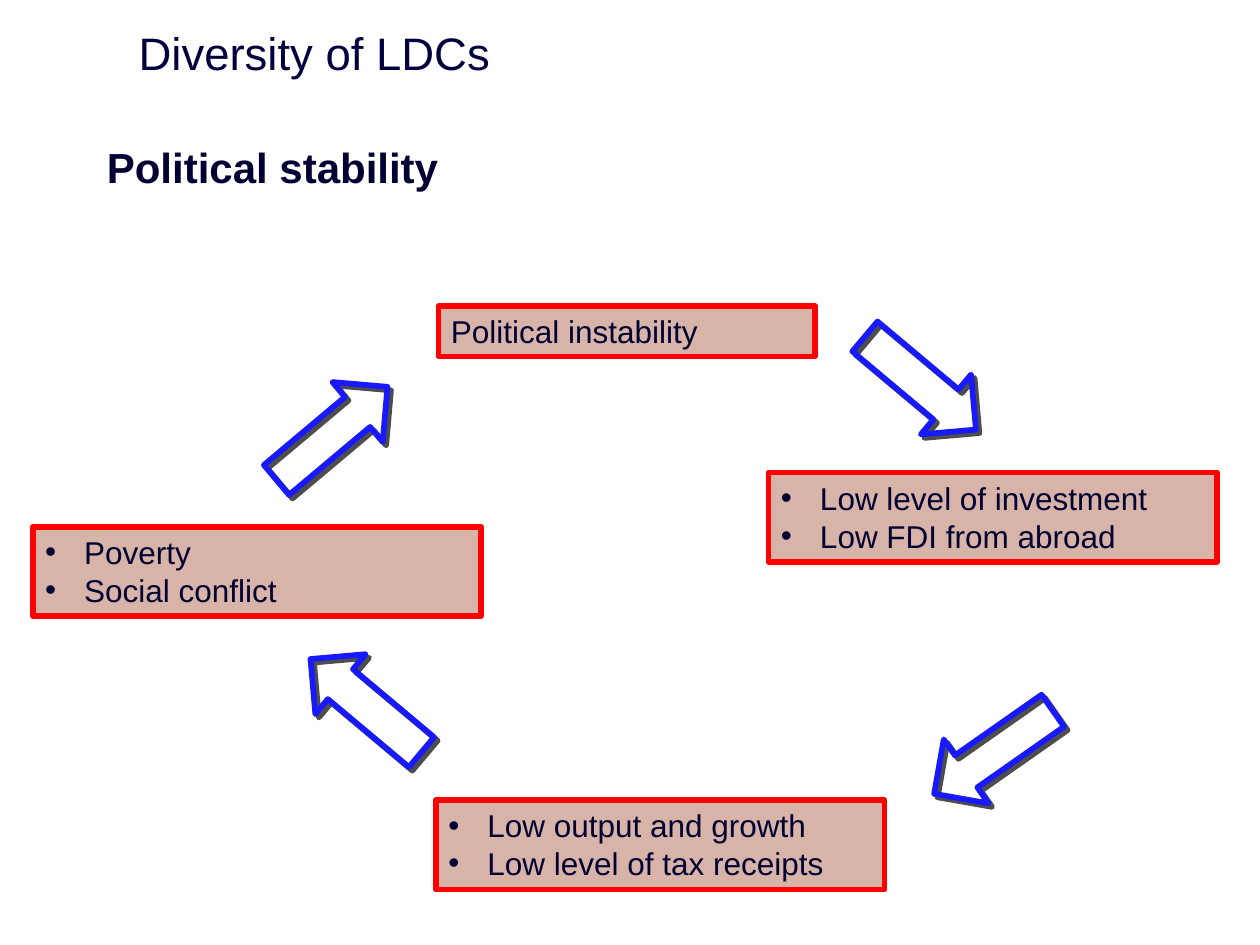
from dataclasses import dataclass
from lxml.etree import SubElement as Sub
from pptx import Presentation as Deck
from pptx.dml.color import RGBColor as RGB
from pptx.enum.shapes import MSO_SHAPE as Kind
from pptx.enum.text import MSO_ANCHOR as Anchor, PP_ALIGN as Align
from pptx.oxml.ns import qn
from pptx.util import Inches, Pt


@dataclass(frozen=True)
class Theme:
    font: str = "Arial"
    title: str = "00003E"
    ink: str = "000032"
    fill: str = "CD9C8D"
    alpha: int = 76
    edge: str = "FF0000"
    arrow: str = "1919FF"
    shade: str = "4D4D4D"
    line: float = 3.25
    big: int = 26
    head: int = 24
    body: int = 18


class Page:
    def __init__(self, slide, theme):
        self.slide = slide
        self.theme = theme

    def run(self, para, text, size, color, bold=False):
        para.alignment = Align.LEFT
        run = para.add_run()
        run.text = text
        run.font.name = self.theme.font
        run.font.size = Pt(size)
        run.font.bold = bold
        run.font.color.rgb = RGB.from_string(color)

    def title(self, text, left, top, width, height):
        shape = self.slide.shapes.title
        shape.left, shape.top = Inches(left), Inches(top)
        shape.width, shape.height = Inches(width), Inches(height)
        frame = shape.text_frame
        frame.vertical_anchor = Anchor.MIDDLE
        self.run(frame.paragraphs[0], text, self.theme.big, self.theme.title)

    def label(self, text, left, top, width, height):
        box = self.slide.shapes.add_textbox(
            Inches(left), Inches(top), Inches(width), Inches(height))
        frame = box.text_frame
        frame.word_wrap = True
        self.run(frame.paragraphs[0], text, self.theme.head, self.theme.ink, True)

    def shape(self, kind, left, top, width, height, edge):
        shape = self.slide.shapes.add_shape(
            kind, Inches(left), Inches(top), Inches(width), Inches(height))
        shape.shadow.inherit = False
        shape.line.color.rgb = RGB.from_string(edge)
        shape.line.width = Pt(self.theme.line)
        return shape

    def bullet(self, para):
        props = para._p.get_or_add_pPr()
        indent = Inches(0.31)
        props.set("marL", str(indent))
        props.set("indent", str(-indent))
        Sub(props, qn("a:buFont"), typeface=self.theme.font)
        Sub(props, qn("a:buChar"), char="•")

    def box(self, lines, left, top, width, height):
        shape = self.shape(Kind.RECTANGLE, left, top, width, height, self.theme.edge)
        shape.fill.solid()
        shape.fill.fore_color.rgb = RGB.from_string(self.theme.fill)
        color = shape._element.spPr.find(qn("a:solidFill"))[0]
        Sub(color, qn("a:alpha"), val=str(self.theme.alpha * 1000))
        frame = shape.text_frame
        frame.word_wrap = True
        frame.vertical_anchor = Anchor.TOP
        for i, line in enumerate(lines):
            para = frame.add_paragraph() if i else frame.paragraphs[0]
            if len(lines) > 1:
                self.bullet(para)
            self.run(para, line, self.theme.body, self.theme.ink)

    def arrow(self, left, top, angle):
        shape = self.shape(Kind.RIGHT_ARROW, left, top, 1.15, 0.62, self.theme.arrow)
        shape.fill.background()
        shape.rotation = angle
        effects = shape._element.spPr.find(qn("a:effectLst"))
        shade = Sub(effects, qn("a:outerShdw"), blurRad="0", dist=str(Pt(2.8)),
                    dir=str(45 * 60000), algn="ctr", rotWithShape="0")
        Sub(shade, qn("a:srgbClr"), val=self.theme.shade)


def main():
    deck = Deck()
    deck.slide_width, deck.slide_height = Inches(10), Inches(7.5)
    page = Page(deck.slides.add_slide(deck.slide_layouts[5]), Theme())
    page.title("Diversity of LDCs", 1, 0.16, 9, 0.51)
    page.label("Political stability", 0.75, 1.07, 8.83, 0.55)

    page.box(["Political instability"], 3.48, 2.43, 2.99, 0.4)
    causes = [
        (6.1, 3.75, ["Low level of investment", "Low FDI from abroad"]),
        (3.46, 6.35, ["Low output and growth", "Low level of tax receipts"]),
        (0.26, 4.18, ["Poverty", "Social conflict"]),
    ]
    for left, top, lines in causes:
        page.box(lines, left, top, 3.56, 0.71)

    arrows = [(6.73, 2.73, 40), (7.31, 5.66, 145), (2.06, 3.13, 320), (2.33, 5.29, 220)]
    for left, top, angle in arrows:
        page.arrow(left, top, angle)
    deck.save("out.pptx")


if __name__ == "__main__":
    main()
